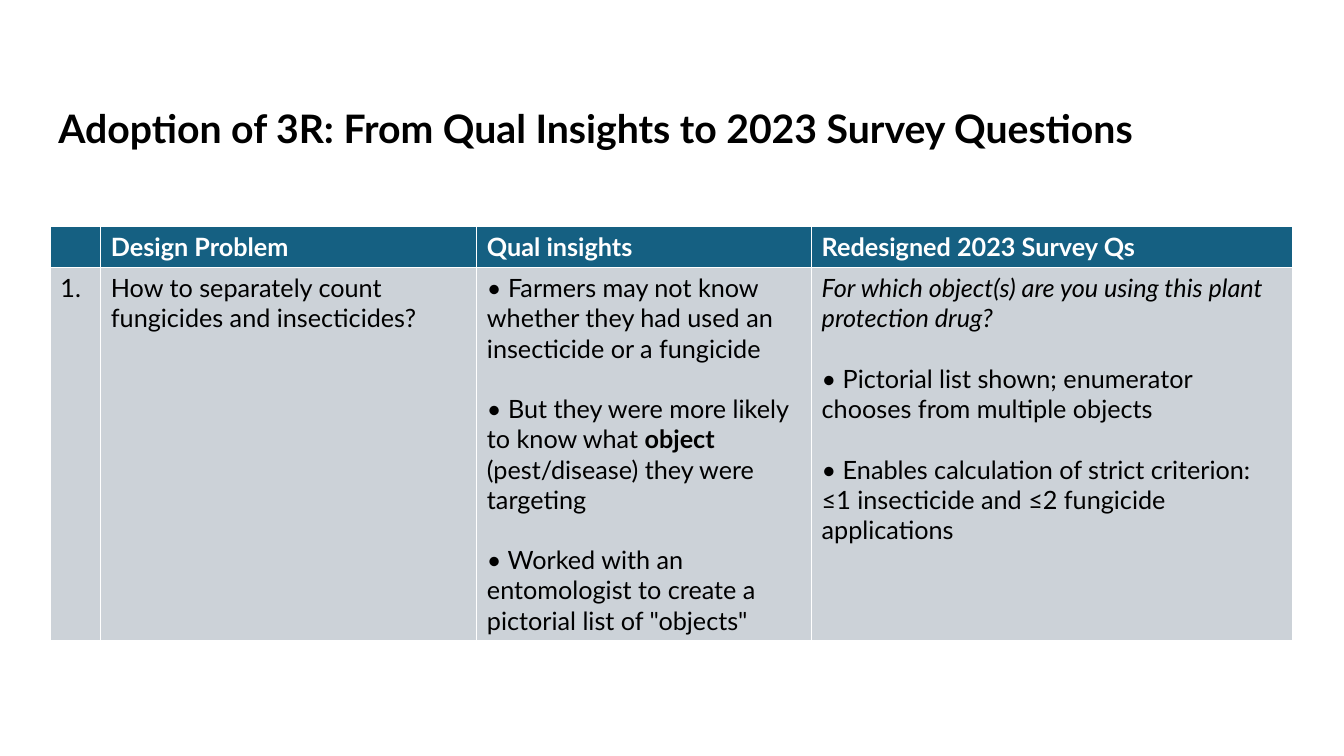
from dataclasses import dataclass

from pptx import Presentation
from pptx.dml.color import RGBColor
from pptx.enum.text import MSO_ANCHOR, MSO_AUTO_SIZE, PP_ALIGN
from pptx.util import Inches, Pt

TITLE = "Adoption of 3R: From Qual Insights to 2023 Survey Questions"
HEADINGS = ["", "Design Problem", "Qual insights", "Redesigned 2023 Survey Qs"]

# Each cell is a list of paragraphs; each paragraph is a list of (text, style) runs.
PLAIN, BOLD, ITALIC = "plain", "bold", "italic"
PROBLEM_ROW = [
    [[("1.", PLAIN)]],
    [[("How to separately count fungicides and insecticides?", PLAIN)]],
    [
        [("• Farmers may not know whether they had used an insecticide or a fungicide", PLAIN)],
        [
            ("• But they were more likely to know what ", PLAIN),
            ("object", BOLD),
            (" (pest/disease) they were targeting", PLAIN),
        ],
        [('• Worked with an entomologist to create a pictorial list of "objects"', PLAIN)],
    ],
    [
        [("For which object(s) are you using this plant protection drug?", ITALIC)],
        [("• Pictorial list shown; enumerator chooses from multiple objects", PLAIN)],
        [("• Enables calculation of strict criterion: ≤1 insecticide and ≤2 fungicide applications", PLAIN)],
    ],
]

SLIDE_SIZE = (13.33, 7.5)
TITLE_BOX = (0.48, 0.93, 12.37, 0.73)
TABLE_CORNER = (0.5, 2.25)
COLUMNS = (0.5, 3.73, 3.32, 4.77)
ROWS = (0.4, 3.7)


@dataclass(frozen=True)
class Theme:
    font: str = "Lato"
    ink: RGBColor = RGBColor(0x00, 0x00, 0x00)
    header_ink: RGBColor = RGBColor(0xFF, 0xFF, 0xFF)
    header_fill: RGBColor = RGBColor(0x15, 0x60, 0x82)
    body_fill: RGBColor = RGBColor(0xCC, 0xD2, 0xD8)
    title_size: Pt = Pt(28)
    table_size: Pt = Pt(18)
    paragraph_gap: Pt = Pt(21.6)


THEME = Theme()


def add_run(paragraph, text, style, size, color):
    run = paragraph.add_run()
    run.text = text
    run.font.name = THEME.font
    run.font.size = size
    run.font.bold = style == BOLD
    run.font.italic = style == ITALIC
    run.font.color.rgb = color


def fill_cell(cell, paragraphs, fill, ink):
    cell.fill.solid()
    cell.fill.fore_color.rgb = fill
    frame = cell.text_frame
    for index, runs in enumerate(paragraphs):
        paragraph = frame.add_paragraph() if index else frame.paragraphs[0]
        if index:
            paragraph.space_before = THEME.paragraph_gap
        # Keeps an empty cell from growing its row.
        paragraph.font.size = THEME.table_size
        for text, style in runs:
            add_run(paragraph, text, style, THEME.table_size, ink)


def add_title(slide):
    title = slide.shapes.title
    title.left, title.top, title.width, title.height = map(Inches, TITLE_BOX)
    frame = title.text_frame
    frame.auto_size = MSO_AUTO_SIZE.NONE
    frame.vertical_anchor = MSO_ANCHOR.MIDDLE
    heading = frame.paragraphs[0]
    heading.alignment = PP_ALIGN.LEFT
    heading.line_spacing = 0.9
    add_run(heading, TITLE, BOLD, THEME.title_size, THEME.ink)


def add_survey_table(slide):
    box = map(Inches, (*TABLE_CORNER, sum(COLUMNS), sum(ROWS)))
    table = slide.shapes.add_table(len(ROWS), len(COLUMNS), *box).table
    for column, width in zip(table.columns, COLUMNS):
        column.width = Inches(width)
    for row, height in zip(table.rows, ROWS):
        row.height = Inches(height)

    header_row = [[[(text, BOLD)] if text else []] for text in HEADINGS]
    looks = [
        (header_row, THEME.header_fill, THEME.header_ink),
        (PROBLEM_ROW, THEME.body_fill, THEME.ink),
    ]
    for row, (contents, fill, ink) in zip(table.rows, looks):
        for cell, paragraphs in zip(row.cells, contents):
            fill_cell(cell, paragraphs, fill, ink)


def main():
    deck = Presentation()
    deck.slide_width, deck.slide_height = map(Inches, SLIDE_SIZE)
    slide = deck.slides.add_slide(deck.slide_layouts[5])
    add_survey_table(slide)
    add_title(slide)
    deck.save("out.pptx")


if __name__ == "__main__":
    main()
